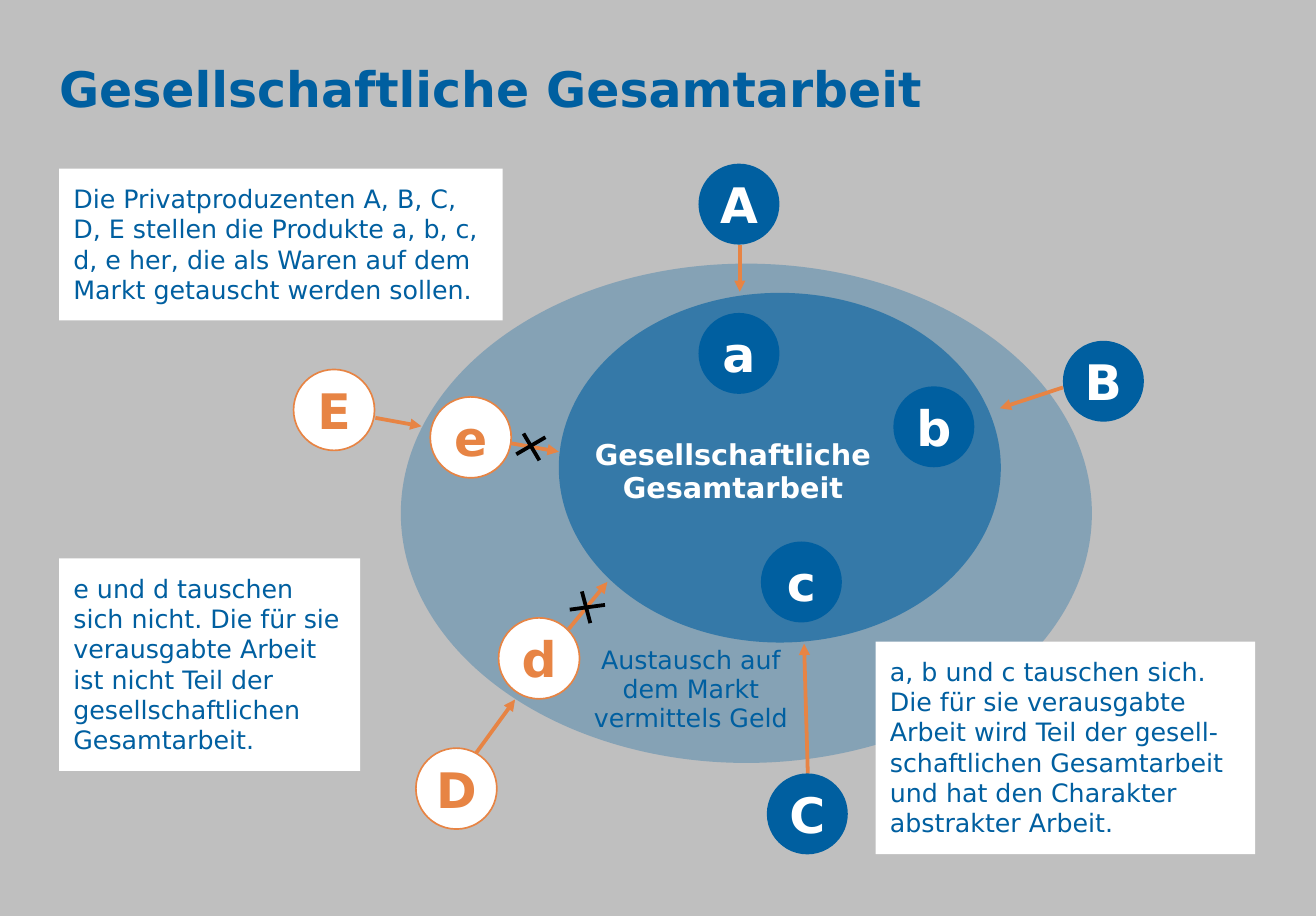
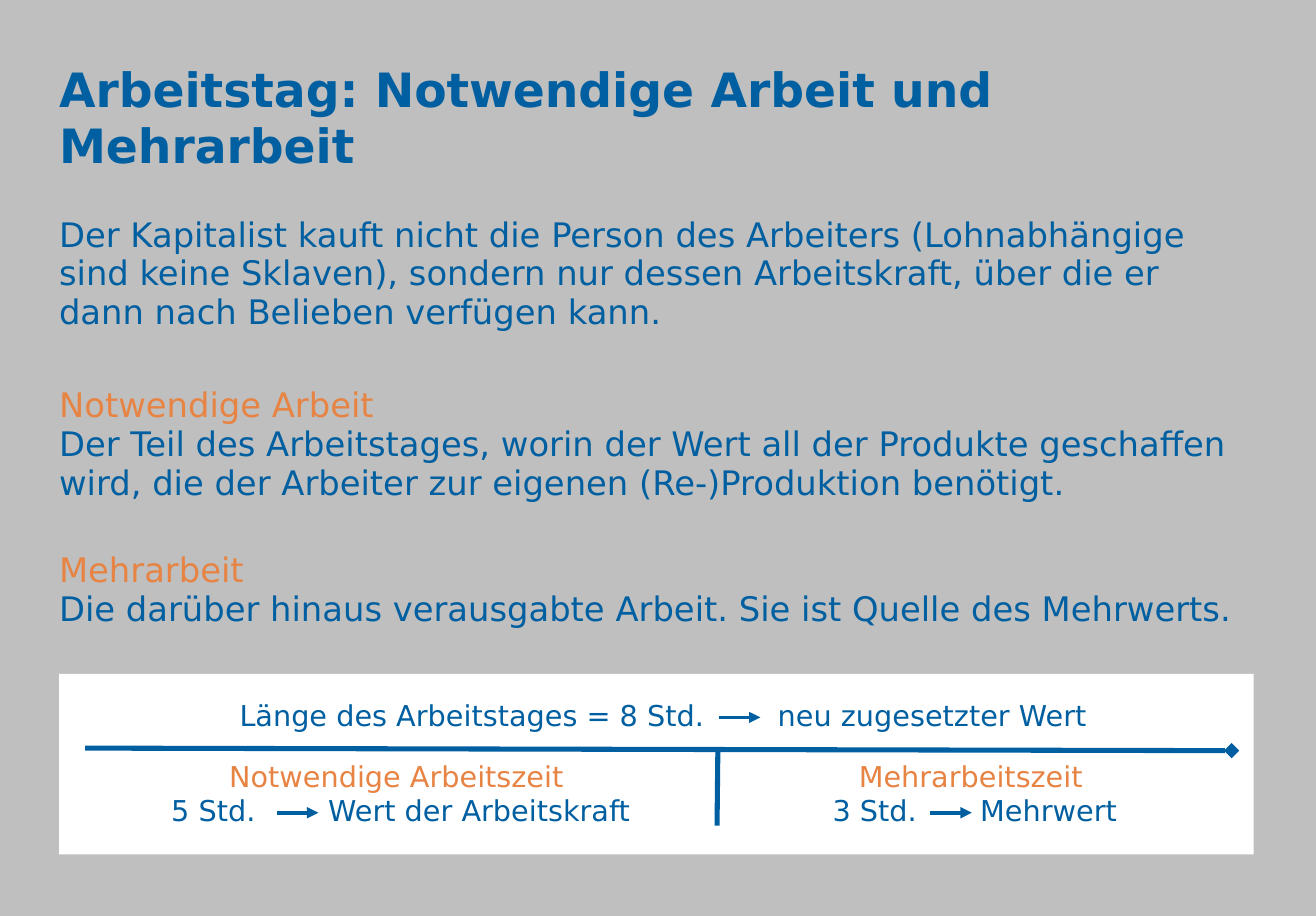
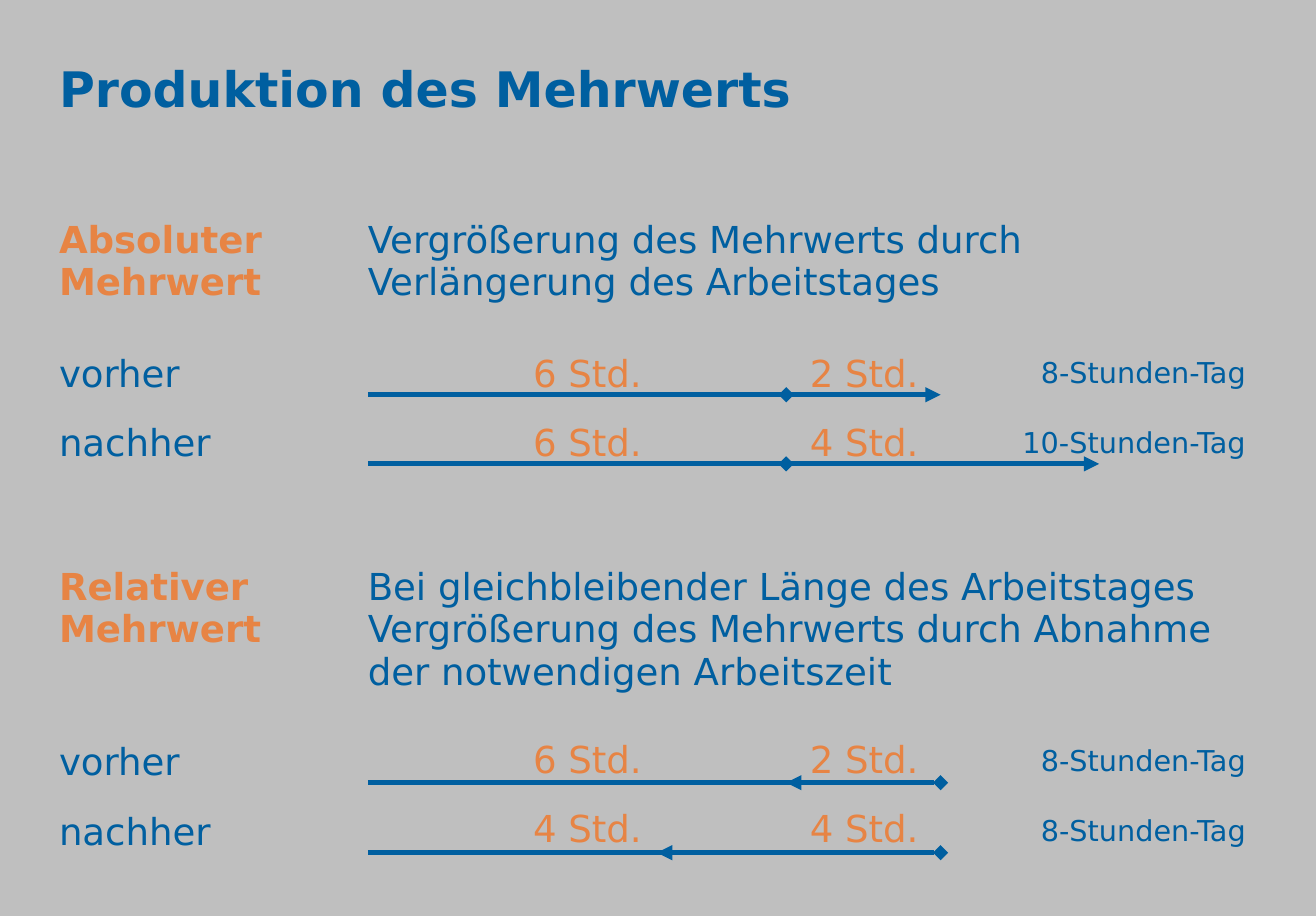
from lxml.etree import SubElement as Sub
from pptx import Presentation
from pptx.dml.color import RGBColor
from pptx.enum.shapes import MSO_CONNECTOR as Conn, MSO_SHAPE as Kind
from pptx.enum.text import MSO_ANCHOR as Anchor, PP_ALIGN as Align
from pptx.oxml.ns import qn
from pptx.util import Pt

BLUE = RGBColor(0x00, 0x5F, 0xA0)
ORANGE = RGBColor(0xE7, 0x84, 0x44)
WHITE = RGBColor(0xFF, 0xFF, 0xFF)
BLACK = RGBColor(0x00, 0x00, 0x00)
GREY = RGBColor(0xBF, 0xBF, 0xBF)
FONT = "DejaVu Sans"
LEFT, WIDE = 35, 708


class Deck:
    def __init__(self):
        self.prs = Presentation()
        self.prs.slide_width, self.prs.slide_height = Pt(780), Pt(543)

    def page(self, title, size=29):
        self.slide = self.prs.slides.add_slide(self.prs.slide_layouts[6])
        fill = self.slide.background.fill
        fill.solid()
        fill.fore_color.rgb = GREY
        self.text(LEFT, 36.3, WIDE, 34, [(title, BLUE)], size, 33, bold=True)

    def typeset(self, frame, paras, size, lead=None, bold=False,
                align=Align.LEFT, inset=0, tab=None):
        """Fill a frame with (text, colour) paragraphs."""
        frame.word_wrap = True
        frame.margin_left = frame.margin_right = Pt(inset)
        frame.margin_top = frame.margin_bottom = Pt(inset)
        for i, (words, color) in enumerate(paras):
            para = frame.add_paragraph() if i else frame.paragraphs[0]
            para.text = words
            para.alignment = align
            if lead:
                para.line_spacing = Pt(lead)
            if tab:
                stops = Sub(para._p.get_or_add_pPr(), qn("a:tabLst"))
                Sub(stops, qn("a:tab"), pos=str(Pt(tab)), algn="l")
            for run in para.runs:
                font = run.font
                font.name, font.size, font.bold = FONT, Pt(size), bold
                font.color.rgb = color

    def text(self, x, y, w, h, paras, size, lead, **style):
        box = self.slide.shapes.add_textbox(Pt(x), Pt(y), Pt(w), Pt(h))
        self.typeset(box.text_frame, paras, size, lead, **style)

    def shape(self, kind, x, y, w, h, fill, edge=None, alpha=None):
        item = self.slide.shapes.add_shape(kind, Pt(x), Pt(y), Pt(w), Pt(h))
        item.shadow.inherit = False
        item.fill.solid()
        item.fill.fore_color.rgb = fill
        if alpha:
            tint = item._element.spPr.find(".//" + qn("a:srgbClr"))
            Sub(tint, qn("a:alpha"), val=str(alpha * 1000))
        if edge is None:
            item.line.fill.background()
        else:
            item.line.color.rgb = edge
            item.line.width = Pt(1)
        return item

    def note(self, x, y, w, h, words):
        frame = self.shape(Kind.RECTANGLE, x, y, w, h, WHITE).text_frame
        frame.vertical_anchor = Anchor.TOP
        self.typeset(frame, [(words, BLUE)], 15, 18, inset=8.5)

    def disc(self, x, y, letter, sold):
        fill, ink, edge = (BLUE, WHITE, None) if sold else (WHITE, ORANGE, ORANGE)
        frame = self.shape(Kind.OVAL, x, y, 48, 48, fill, edge).text_frame
        frame.vertical_anchor = Anchor.MIDDLE
        self.typeset(frame, [(letter, ink)], 29, bold=True, align=Align.CENTER)

    def line(self, x1, y1, x2, y2, color=BLUE, width=3, head=None, tail=None):
        item = self.slide.shapes.add_connector(
            Conn.STRAIGHT, Pt(x1), Pt(y1), Pt(x2), Pt(y2))
        item.line.color.rgb = color
        item.line.width = Pt(width)
        props = item._element.spPr
        ln = props.find(qn("a:ln"))
        for tag, end in (("a:headEnd", head), ("a:tailEnd", tail)):
            if end:
                Sub(ln, qn(tag), type=end)
        Sub(props, qn("a:effectLst"))

    def pair(self, x, y, left, right, tab, start):
        """Two terms joined by a short arrow."""
        self.text(x, y, 520, 20, [(left + "\t" + right, BLUE)], 17, 20, tab=tab)
        self.line(start, y + 11.3, start + 24.5, y + 11.3,
                  width=2.25, tail="triangle")

    def day(self, y, label, need, more, total, cut, end, back=False, lift=25):
        """One working day: label, hours, split bar and total."""
        self.text(LEFT, y - 25, 180, 25, [(label, BLUE)], 22, 25)
        for x, hours in ((316, need), (480, more)):
            self.text(x, y - lift, 160, 25, [(f"{hours} Std.", ORANGE)], 22, 25)
        self.line(218, y, cut + 6, y)
        x1, x2 = (end, cut) if back else (cut, end)
        self.line(x1, y, x2, y, head="diamond", tail="triangle")
        self.text(588.5, y - 25, 150, 22, [(f"{total}-Stunden-Tag", BLUE)],
                  17, 22, align=Align.RIGHT)


def labour(deck):
    deck.page("Gesellschaftliche Gesamtarbeit")
    # Market and total labour
    deck.shape(Kind.OVAL, 237.6, 156.3, 409.6, 296, BLUE, alpha=30)
    deck.shape(Kind.OVAL, 331.2, 173.6, 262, 207.3, BLUE, alpha=60)
    deck.text(338, 259.2, 193, 41, [("Gesellschaftliche\nGesamtarbeit", WHITE)],
              17, 20, bold=True, align=Align.CENTER)
    deck.text(301, 383, 217, 52,
              [("Austausch auf\ndem Markt\nvermittels Geld", BLUE)],
              15, 17, align=Align.CENTER)
    # Arrows
    for ends in ((438.5, 145, 438.5, 173), (630, 229.7, 592.6, 242),
                 (478.8, 458.6, 476.6, 381.6), (222.5, 247.7, 249.8, 252.7),
                 (337, 373, 360, 345), (282.2, 446.4, 305.3, 414.7),
                 (303, 262.8, 331.2, 267.8)):
        deck.line(*ends, color=ORANGE, width=2.25, tail="triangle")
    # Crosses on the blocked exchanges
    for ends in ((344.9, 350.6, 349.9, 369.4), (337.7, 361.4, 358.6, 358.6),
                 (310.3, 257, 319.7, 272.9), (306, 269.3, 323.3, 259.2)):
        deck.line(*ends, color=BLACK, width=2.25)
    # Producers and products
    for x, y, letter in ((414, 97, "A"), (414, 185.5, "a"), (630, 202, "B"),
                         (529.5, 229, "b"), (454.5, 458.5, "C"), (451, 321, "c")):
        deck.disc(x, y, letter, True)
    for x, y, letter in ((174, 219, "E"), (255, 235.3, "e"),
                         (246.5, 443.5, "D"), (295.5, 366.3, "d")):
        deck.disc(x, y, letter, False)
    # Notes
    deck.note(LEFT, 100, 263, 90,
              "Die Privatproduzenten A, B, C, D, E stellen die Produkte a, b, c, "
              "d, e her, die als Waren auf dem Markt getauscht werden sollen.")
    deck.note(LEFT, 331, 178.5, 126,
              "e und d tauschen\nsich nicht. Die für sie verausgabte Arbeit\n"
              "ist nicht Teil der gesellschaftlichen Gesamtarbeit.")
    deck.note(519, 380.3, 225, 126,
              "a, b und c tauschen sich.\nDie für sie verausgabte Arbeit wird "
              "Teil der gesell-schaftlichen Gesamtarbeit und hat den Charakter "
              "abstrakter Arbeit.")


def workday(deck):
    deck.page("Arbeitstag: Notwendige Arbeit und Mehrarbeit", 28)
    # Definitions
    deck.text(LEFT, 127.5, WIDE, 72,
              [("Der Kapitalist kauft nicht die Person des Arbeiters "
                "(Lohnabhängige sind keine Sklaven), sondern nur dessen "
                "Arbeitskraft, über die er dann nach Belieben verfügen kann.",
                BLUE)], 20, 23)
    for y, term, words in (
            (228.5, "Notwendige Arbeit",
             "Der Teil des Arbeitstages, worin der Wert all der Produkte "
             "geschaffen wird, die der Arbeiter zur eigenen (Re-)Produktion "
             "benötigt."),
            (326.5, "Mehrarbeit",
             "Die darüber hinaus verausgabte Arbeit. Sie ist Quelle des "
             "Mehrwerts.")):
        deck.text(LEFT, y, 718, 70, [(term, ORANGE), (words, BLUE)], 20, 23)
    # Time line
    deck.shape(Kind.RECTANGLE, LEFT, 399.5, WIDE, 107, WHITE)
    deck.line(50.4, 443.5, 730, 445, tail="diamond")
    deck.line(425, 489.5, 425.5, 445)
    deck.pair(142, 414, "Länge des Arbeitstages = 8 Std.",
              "neu zugesetzter Wert", 319, 426.2)
    # Parts of the day
    for x, w, term in ((47.5, 375, "Notwendige Arbeitszeit"),
                       (423.5, 304, "Mehrarbeitszeit")):
        deck.text(x, 450.5, w, 20, [(term, ORANGE)], 17, 20, align=Align.CENTER)
    deck.pair(101.5, 470.5, "5 Std.", "Wert der Arbeitskraft", 93, 164.2)
    deck.pair(493.5, 470.5, "3 Std.", "Mehrwert", 87.5, 551.5)


def surplus(deck):
    deck.page("Produktion des Mehrwerts")
    # Two kinds of surplus value
    for y, term, words in (
            (129.6, "Absoluter\nMehrwert",
             "Vergrößerung des Mehrwerts durch Verlängerung des Arbeitstages"),
            (335.5, "Relativer\nMehrwert",
             "Bei gleichbleibender Länge des Arbeitstages Vergrößerung des "
             "Mehrwerts durch Abnahme der notwendigen Arbeitszeit")):
        deck.text(LEFT, y, 180, 50, [(term, ORANGE)], 22, 25, bold=True)
        deck.text(218, y, 526, 75, [(words, BLUE)], 22, 25)
    # Days before and after
    deck.day(234, "vorher", 6, 2, 8, 466, 557.5)
    deck.day(275, "nachher", 6, 4, 10, 466, 651.5)
    deck.day(464, "vorher", 6, 2, 8, 466, 557.5, back=True, lift=26)
    deck.day(505.5, "nachher", 4, 4, 8, 389.5, 557.5, back=True, lift=26.5)


def main():
    deck = Deck()
    for build in (labour, workday, surplus):
        build(deck)
    deck.prs.save("out.pptx")


if __name__ == "__main__":
    main()
